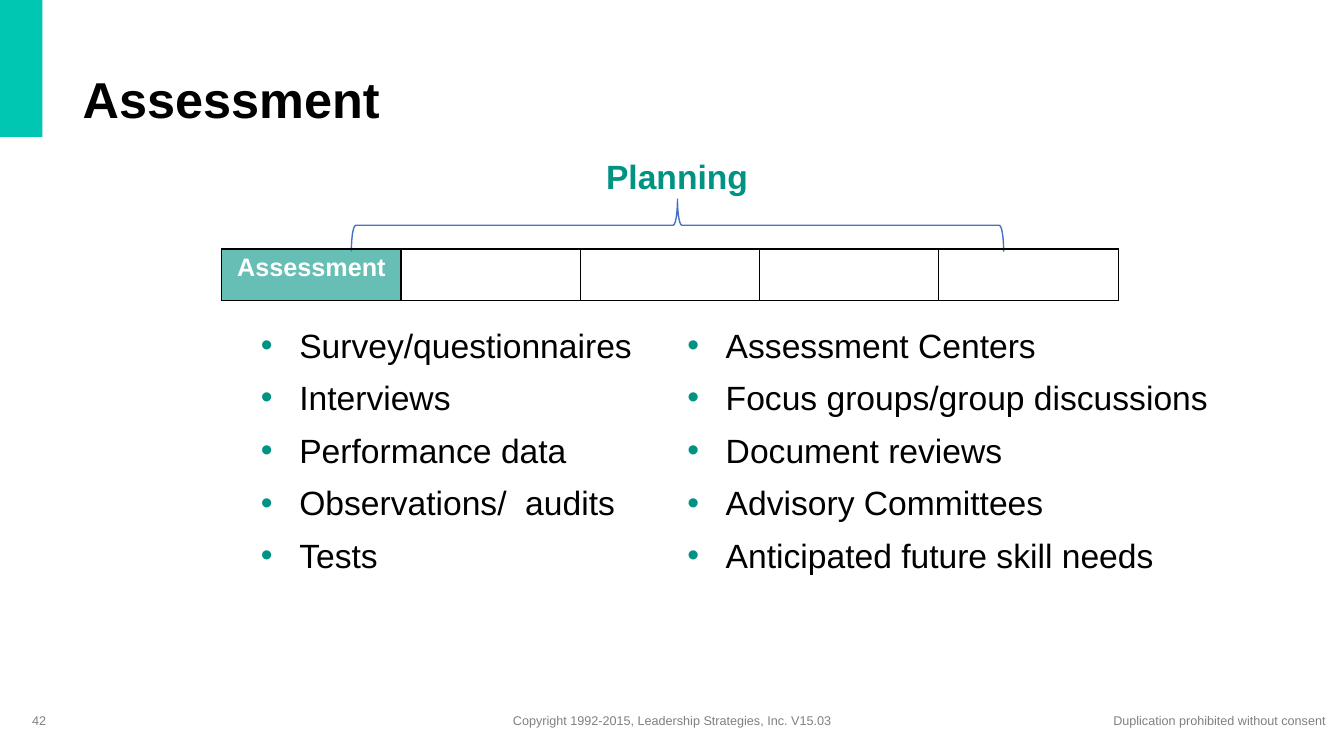
from dataclasses import dataclass

from lxml import etree
from pptx import Presentation
from pptx import util as u
from pptx.dml.color import RGBColor
from pptx.enum import shapes, text
from pptx.oxml.ns import qn

Inches = u.Inches
LEFT, MID = text.PP_ALIGN.LEFT, text.PP_ALIGN.CENTER


@dataclass(frozen=True)
class Theme:
    face: str = "Arial"
    black: str = "000000"
    white: str = "FFFFFF"
    grey: str = "808080"
    teal: str = "009383"
    mint: str = "00C7B1"
    blue: str = "4472C4"
    title: int = 36
    body: int = 24
    cell: int = 18
    foot: int = 9


def assign(item, values):
    for name, value in values.items():
        setattr(item, name, value)


def node(parent, tag, **attrs):
    return etree.SubElement(parent, qn(tag), attrs)


class Page:
    def __init__(self, deck, theme):
        self.theme = theme
        self.slide = deck.slides.add_slide(deck.slide_layouts[5])
        self.shapes = self.slide.shapes

    def words(self, para, copy, size, color, bold=False, align=LEFT):
        run = para.add_run()
        run.text = copy
        para.alignment = align
        assign(run.font, {"name": self.theme.face, "size": u.Pt(size), "bold": bold})
        run.font.color.rgb = RGBColor.from_string(color)

    def title(self, copy, box):
        item = self.shapes.title
        assign(item, dict(zip(("left", "top", "width", "height"), map(Inches, box))))
        frame = item.text_frame
        assign(frame, {"vertical_anchor": text.MSO_ANCHOR.BOTTOM,
                       "auto_size": text.MSO_AUTO_SIZE.NONE, "word_wrap": True})
        para = frame.paragraphs[0]
        para.line_spacing = 0.9
        self.words(para, copy, self.theme.title, self.theme.black, True)

    def frame(self, box, wrap=True, anchor=text.MSO_ANCHOR.TOP):
        frame = self.shapes.add_textbox(*map(Inches, box)).text_frame
        assign(frame, {"word_wrap": wrap, "vertical_anchor": anchor})
        return frame

    def label(self, copy, box, size, color, bold=False, align=MID, **opts):
        para = self.frame(box, **opts).paragraphs[0]
        self.words(para, copy, size, color, bold, align)

    def bullets(self, lines, box):
        frame = self.frame(box)
        for i, line in enumerate(lines):
            para = frame.add_paragraph() if i else frame.paragraphs[0]
            if i:
                para.space_before = u.Pt(8.8)
            props = para._p.get_or_add_pPr()
            props.set("marL", str(Inches(0.38)))
            props.set("indent", str(-Inches(0.38)))
            node(node(props, "a:buClr"), "a:srgbClr", val=self.theme.teal)
            node(props, "a:buFont", typeface=self.theme.face)
            node(props, "a:buChar", char="•")
            self.words(para, line, self.theme.body, self.theme.black)

    def shape(self, kind, box, fill=None, line=None, turn=0):
        item = self.shapes.add_shape(kind, *map(Inches, box))
        item.shadow.inherit = False
        item.rotation = turn
        if fill:
            item.fill.solid()
            item.fill.fore_color.rgb = RGBColor.from_string(fill)
        else:
            item.fill.background()
        if line:
            item.line.color.rgb = RGBColor.from_string(line)
            item.line.width = u.Pt(1)
        else:
            item.line.fill.background()

    def steps(self, copy, count, box):
        table = self.shapes.add_table(1, count, *map(Inches, box)).table
        assign(table, {"first_row": False, "horz_banding": False})
        for cell in table.rows[0].cells:
            props = cell._tc.get_or_add_tcPr()
            for side in ("L", "R", "T", "B"):
                edge = node(props, f"a:ln{side}", w=str(u.Pt(1)))
                node(node(edge, "a:solidFill"), "a:srgbClr", val=self.theme.black)
            cell.fill.background()
        first = table.cell(0, 0)
        first.fill.solid()
        first.fill.fore_color.rgb = RGBColor.from_string(self.theme.teal)
        tint = first._tc.tcPr.find(qn("a:solidFill"))[0]
        node(tint, "a:alpha", val="60000")
        self.words(first.text_frame.paragraphs[0], copy, self.theme.cell,
                   self.theme.white, True, MID)


def main():
    deck = Presentation()
    assign(deck, {"slide_width": Inches(13.33), "slide_height": Inches(7.5)})
    look = Theme()
    page = Page(deck, look)
    kinds = shapes.MSO_SHAPE

    page.shape(kinds.RECTANGLE, (0, 0, 0.42, 1.36), fill=look.mint)
    page.title("Assessment", (0.72, 0.57, 8.12, 0.76))
    page.bullets(("Survey/questionnaires", "Interviews", "Performance data",
                  "Observations/  audits", "Tests"), (2.49, 3.17, 4.31, 4.33))
    page.bullets(("Assessment Centers", "Focus groups/group discussions",
                  "Document reviews", "Advisory Committees",
                  "Anticipated future skill needs"), (6.72, 3.17, 5.43, 4.33))
    page.label("Planning", (5.88, 1.5, 1.67, 0.5), look.body, look.teal, True)
    page.shape(kinds.RIGHT_BRACE, (6.46, -1, 0.52, 6.47), line=look.blue, turn=270)
    page.steps("Assessment", 5, (2.2, 2.47, 8.89, 0.51))

    page.label("42", (0.22, 6.95, 3, 0.4), look.foot, look.grey, align=LEFT,
               anchor=text.MSO_ANCHOR.MIDDLE)
    for note, left, width in (
            ("Copyright 1992-2015, Leadership Strategies, Inc. V15.03", 4.97, 3.39),
            ("Duplication prohibited without consent", 10.93, 2.33)):
        page.label(note, (left, 7.02, width, 0.25), look.foot, look.grey, wrap=False)

    deck.save("out.pptx")


if __name__ == "__main__":
    main()
